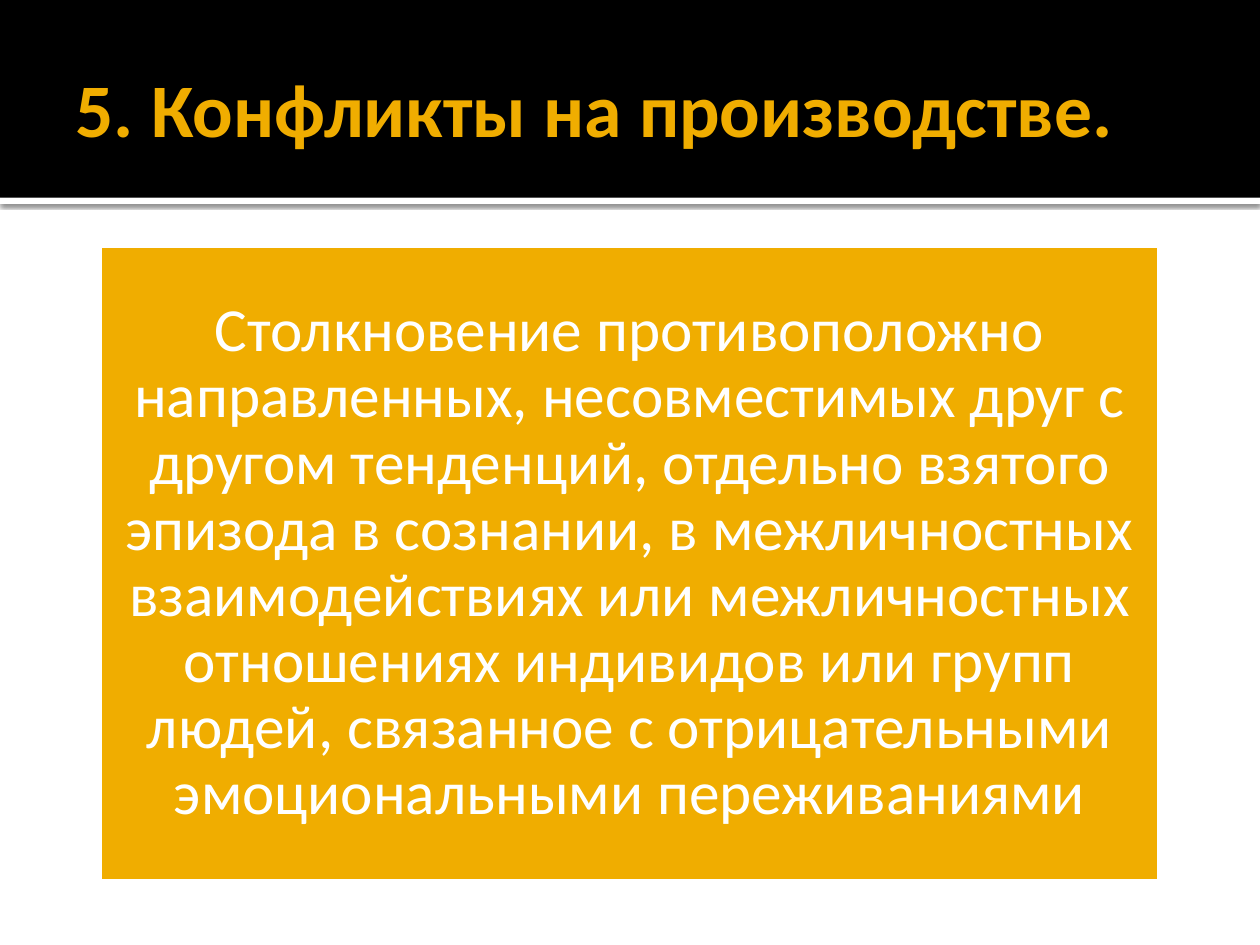
from dataclasses import dataclass

from lxml.etree import SubElement
from pptx import Presentation
from pptx.dml.color import RGBColor
from pptx.enum.shapes import MSO_SHAPE
from pptx.enum.text import MSO_ANCHOR, PP_ALIGN
from pptx.oxml.ns import qn
from pptx.util import Pt


@dataclass(frozen=True)
class Theme:
    font: str = "Calibri"
    amber: RGBColor = RGBColor(0xF0, 0xAD, 0x00)
    black: RGBColor = RGBColor(0, 0, 0)
    white: RGBColor = RGBColor(0xFF, 0xFF, 0xFF)
    title_size: float = 43.2
    body_size: float = 35


THEME = Theme()
SLIDE_WIDTH, SLIDE_HEIGHT = 720, 540
TITLE = "5. Конфликты на производстве."
DEFINITION = (
    "Столкновение противоположно направленных, несовместимых друг с другом "
    "тенденций, отдельно взятого эпизода в сознании, в межличностных "
    "взаимодействиях или межличностных отношениях индивидов или групп людей, "
    "связанное с отрицательными эмоциональными переживаниями"
)


def add_block(slide, box, fill):
    """Add a plain filled rectangle without outline or shadow."""
    block = slide.shapes.add_shape(MSO_SHAPE.RECTANGLE, *map(Pt, box))
    block.shadow.inherit = False
    block.fill.solid()
    block.fill.fore_color.rgb = fill
    block.line.fill.background()
    return block


def add_drop_shadow(block):
    effects = block.element.spPr.find(qn("a:effectLst"))
    shadow = SubElement(effects, qn("a:outerShdw"), blurRad=str(Pt(2.5)),
                        dist=str(Pt(0.8)), dir="5400000", rotWithShape="0")
    color = SubElement(shadow, qn("a:srgbClr"), val=str(THEME.black))
    SubElement(color, qn("a:alpha"), val="60000")


def write_text(frame, text, size, color, align, insets, bold=False):
    frame.word_wrap = True
    frame.vertical_anchor = MSO_ANCHOR.MIDDLE
    (frame.margin_left, frame.margin_top,
     frame.margin_right, frame.margin_bottom) = map(Pt, insets)
    paragraph = frame.paragraphs[0]
    paragraph.alignment = align
    run = paragraph.add_run()
    run.text = text
    run.font.name = THEME.font
    run.font.size = Pt(size)
    run.font.bold = bold
    run.font.color.rgb = color
    return paragraph


def build_header(slide, box):
    left, top, width, height = box
    # White rule with a soft shadow, then the black band
    rule = add_block(slide, (left, top + height, width, 3.6), THEME.white)
    add_drop_shadow(rule)
    add_block(slide, box, THEME.black)

    # Title, brought in front of the band
    title = slide.shapes.title
    title.left, title.top = Pt(left + 36), Pt(top + 12.24)
    title.width, title.height = Pt(width - 72), Pt(98.64)
    write_text(title.text_frame, TITLE, THEME.title_size, THEME.amber,
               PP_ALIGN.LEFT, (7.2, 3.6, 3.6, 3.6), bold=True)
    title.element.getparent().append(title.element)


def build_definition(slide, box):
    panel = add_block(slide, box, THEME.amber)
    panel.line.color.rgb = THEME.white
    panel.line.width = Pt(3.78)
    paragraph = write_text(panel.text_frame, DEFINITION, THEME.body_size,
                           THEME.white, PP_ALIGN.CENTER, (10.8,) * 4)
    paragraph.line_spacing = 0.9


def main():
    deck = Presentation()
    deck.slide_width, deck.slide_height = Pt(SLIDE_WIDTH), Pt(SLIDE_HEIGHT)
    slide = deck.slides.add_slide(deck.slide_layouts[5])
    slide.background.fill.solid()
    slide.background.fill.fore_color.rgb = THEME.white
    build_header(slide, (0, 0, SLIDE_WIDTH, 113))
    build_definition(slide, (56.7, 139.9, 606.6, 364.2))
    deck.save("out.pptx")


if __name__ == "__main__":
    main()
